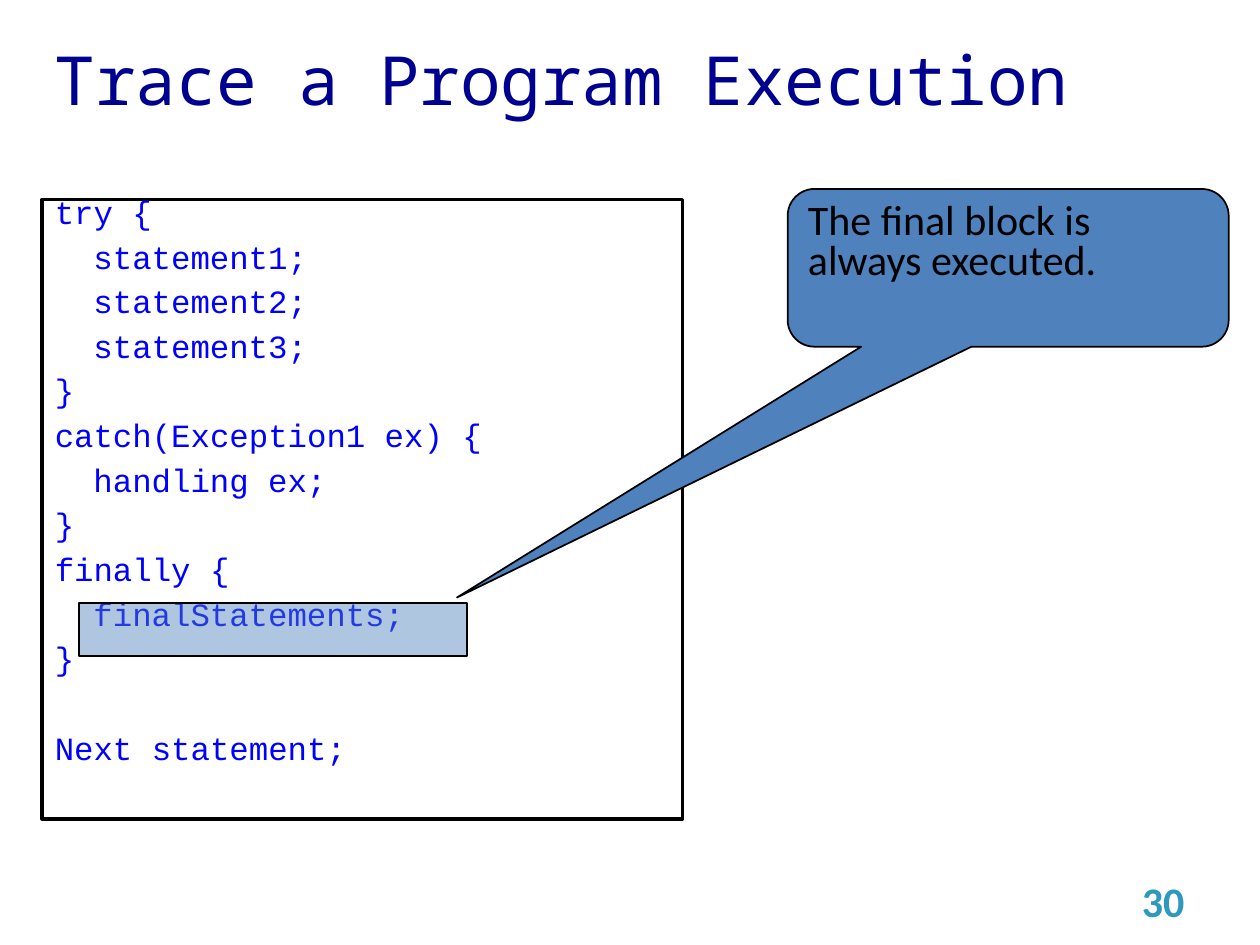
import pptx
import pptx.dml.color
import pptx.enum.shapes
import pptx.enum.text
import pptx.oxml.ns
import pptx.util
from lxml import etree

Cm, Pt = pptx.util.Cm, pptx.util.Pt
ALIGN = pptx.enum.text.PP_ALIGN
ANCHOR = pptx.enum.text.MSO_ANCHOR
SHAPE = pptx.enum.shapes.MSO_SHAPE
qn = pptx.oxml.ns.qn


def set_color(color_format, color):
    color_format.rgb = pptx.dml.color.RGBColor.from_string(color)


def write(paragraph, text, color, font, spacing):
    """Put one run in a paragraph, with font and paragraph values from dicts."""
    run = paragraph.add_run()
    run.text = text
    set_color(run.font.color, color)
    for target, values in ((run.font, font), (paragraph, spacing)):
        for name, value in values.items():
            setattr(target, name, value)


presentation = pptx.Presentation()
presentation.slide_width, presentation.slide_height = Cm(25.4), Cm(19.05)
slide = presentation.slides.add_slide(presentation.slide_layouts[1])
title, code = slide.shapes.title, slide.placeholders[1]

# Other shapes: highlight over a code line, callout, slide number
highlight = slide.shapes.add_shape(
    SHAPE.RECTANGLE, Cm(1.59), Cm(12.16), Cm(7.83), Cm(1.06))
callout = slide.shapes.add_shape(
    SHAPE.ROUNDED_RECTANGULAR_CALLOUT, Cm(15.88), Cm(3.81), Cm(8.89), Cm(3.18))
for index, value in enumerate((-1.25, 2.09, 0.17)):
    callout.adjustments[index] = value
number = slide.shapes.add_textbox(Cm(18.2), Cm(17.65), Cm(5.93), Cm(1.02))

# Placeholder positions
for shape, box in ((title, (0.85, 0.85, 22.65, 1.48)),
                   (code, (0.85, 4.02, 12.91, 12.49))):
    for name, length in zip(("left", "top", "width", "height"), box):
        setattr(shape, name, Cm(length))

# Fills and outlines
for shape, fill, width in ((code, "FFFFFF", 2), (highlight, "4F81BD", 1),
                           (callout, "4F81BD", 1)):
    shape.fill.solid()
    set_color(shape.fill.fore_color, fill)
    set_color(shape.line.color, "000000")
    shape.line.width = Pt(width)
for shape in (highlight, callout):
    shape.shadow.inherit = False
highlight_color = highlight._element.spPr.find(qn("a:solidFill"))[0]
etree.SubElement(highlight_color, qn("a:alpha"), val="45000")

# Text frames
for shape, anchor in ((title, ANCHOR.MIDDLE), (code, ANCHOR.TOP),
                      (callout, ANCHOR.TOP), (number, ANCHOR.MIDDLE)):
    frame_format = {"word_wrap": True, "vertical_anchor": anchor,
                    "auto_size": pptx.enum.text.MSO_AUTO_SIZE.NONE}
    for name, value in frame_format.items():
        setattr(shape.text_frame, name, value)

# Title, callout and slide number text
write(title.text_frame.paragraphs[0], "Trace a Program Execution", "000090",
      {"name": "Noto Sans Mono", "size": Pt(38.7)}, {"alignment": ALIGN.LEFT})
write(callout.text_frame.paragraphs[0], "The final block is always executed.",
      "000000", {"name": "Calibri", "size": Pt(24)},
      {"alignment": ALIGN.LEFT, "line_spacing": 0.8, "space_before": Pt(4.8)})
write(number.text_frame.paragraphs[0], "30", "2E98BD",
      {"name": "Calibri", "size": Pt(24), "bold": True},
      {"alignment": ALIGN.RIGHT})

# Code lines: indent level, text, space before in points
LINE_GAP = 12.2
code_lines = [
    (0, "try {", LINE_GAP),
    (1, "statement1;", LINE_GAP),
    (1, "statement2;", LINE_GAP),
    (1, "statement3;", LINE_GAP),
    (0, "}", LINE_GAP),
    (0, "catch(Exception1 ex) {", LINE_GAP),
    (1, "handling ex;", LINE_GAP),
    (0, "}", LINE_GAP),
    (0, "finally {", LINE_GAP),
    (1, "finalStatements;", LINE_GAP),
    (0, "}", LINE_GAP),
    (0, "Next statement;", LINE_GAP + 25.5),
]
for index, (level, text, gap) in enumerate(code_lines):
    frame = code.text_frame
    paragraph = frame.add_paragraph() if index else frame.paragraphs[0]
    write(paragraph, text, "0000FF",
          {"name": "Courier New", "size": Pt(18.5)},
          {"line_spacing": 0.6, "space_before": Pt(gap)})
    properties = paragraph._p.get_or_add_pPr()
    properties.set("marL", str(Cm(0.78 * level)))
    properties.set("indent", "0")
    etree.SubElement(properties, qn("a:buNone"))

presentation.save("out.pptx")
